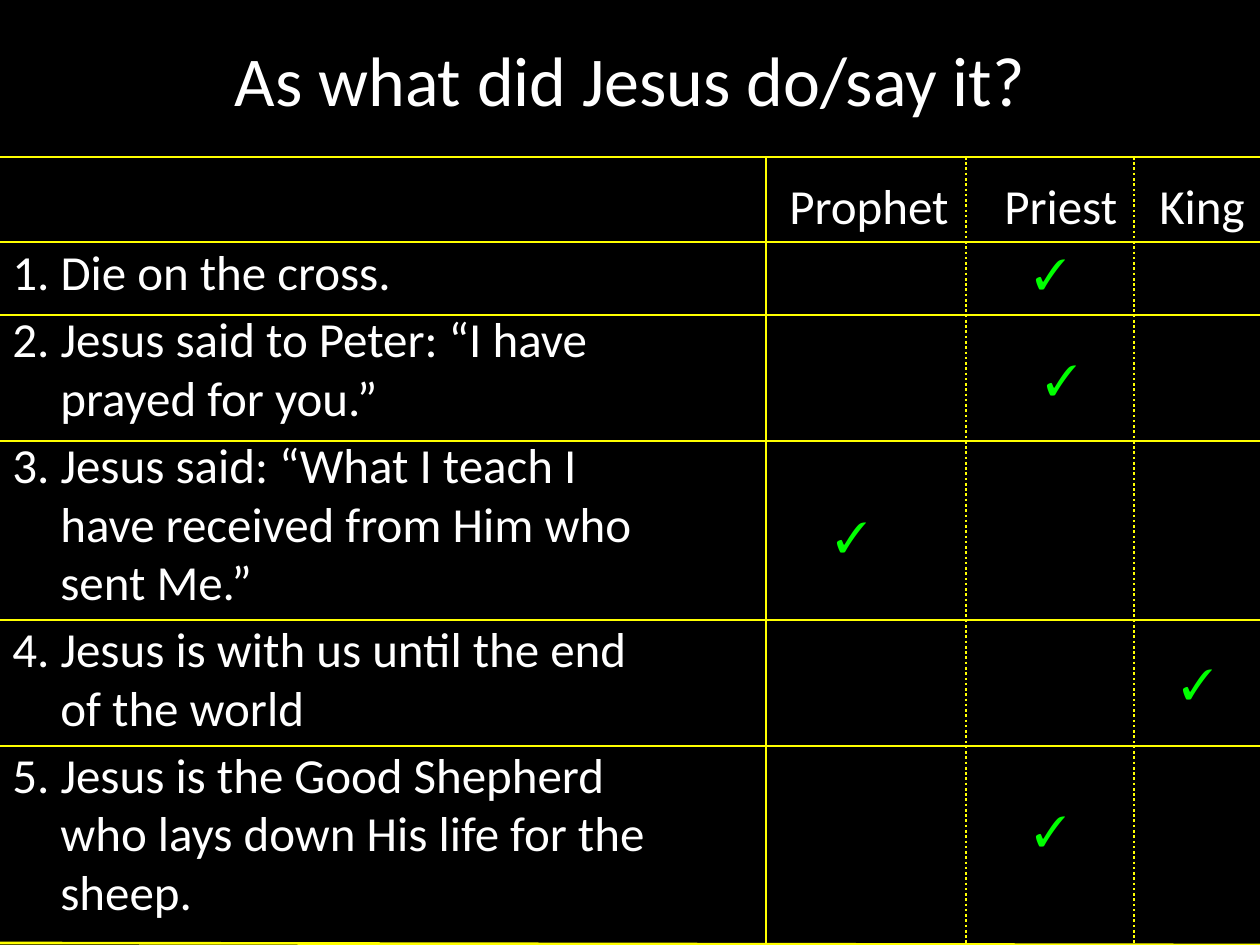
from lxml.etree import SubElement
from pptx import Presentation
from pptx.dml.color import RGBColor
from pptx.enum.dml import MSO_LINE
from pptx.enum.shapes import MSO_CONNECTOR
from pptx.enum.text import MSO_ANCHOR, PP_ALIGN
from pptx.oxml.ns import qn
from pptx.util import Pt

COLORS = {"background": "000000", "text": "FFFFFF", "rule": "FFFF00", "check": "00FF00"}
PX = 914400 // 126
WIDTH, HEIGHT = 1260, 945

TITLE = "As what did Jesus do/say it?"
ROLES = [("Prophet", 790), ("Priest", 1005), ("King", 1160)]
STATEMENTS = [
    "1. Die on the cross.",
    "2. Jesus said to Peter: “I have\nprayed for you.”",
    "3. Jesus said: “What I teach I\nhave received from Him who\nsent Me.”",
    "4. Jesus is with us until the end\nof the world",
    "5. Jesus is the Good Shepherd\nwho lays down His life for the\nsheep.",
]
CHECKS = [(1050, 272), (1061, 378), (851, 535), (1197, 682), (1050, 829)]
TABLE_TOP = 157
ROW_RULES = [TABLE_TOP, 242, 315, 441, 620, 746]
COLUMN_RULES = [(766, None), (966, MSO_LINE.ROUND_DOT), (1134, MSO_LINE.ROUND_DOT)]
INSET = 13
INDENT = 48
CHECK_WIDTH, CHECK_HEIGHT = 59, 63


def color(name):
    return RGBColor.from_string(COLORS[name])


def add_text(slide, box, paragraphs, size, font="Calibri", ink="text",
             align=PP_ALIGN.LEFT, anchor=MSO_ANCHOR.TOP, wrap=True):
    frame = slide.shapes.add_textbox(*(n * PX for n in box)).text_frame
    frame.word_wrap = wrap
    frame.vertical_anchor = anchor
    for index, words in enumerate(paragraphs):
        paragraph = frame.add_paragraph() if index else frame.paragraphs[0]
        paragraph.text = words
        paragraph.alignment = align
        for run in paragraph.runs:
            run.font.size = Pt(size)
            run.font.name = font
            run.font.color.rgb = color(ink)
    return frame


def add_rule(slide, x1, y1, x2, y2, dash=None):
    rule = slide.shapes.add_connector(
        MSO_CONNECTOR.STRAIGHT, *(n * PX for n in (x1, y1, x2, y2)))
    rule.line.color.rgb = color("rule")
    rule.line.width = Pt(1.5)
    if dash:
        rule.line.dash_style = dash
    SubElement(rule._element.spPr, qn("a:effectLst"))


def add_body(slide):
    header = "".join("\t" + role for role, _ in ROLES)
    frame = add_text(slide, (0, 169, WIDTH, HEIGHT - 169), [header] + STATEMENTS, 28)
    heading, *statements = frame.paragraphs
    tabs = SubElement(heading._p.get_or_add_pPr(), qn("a:tabLst"))
    for _, left in ROLES:
        SubElement(tabs, qn("a:tab"), pos=str((left - INSET) * PX), algn="l")
    for statement in statements:
        statement.space_before = Pt(4.5)
        properties = statement._p.get_or_add_pPr()
        properties.set("marL", str(INDENT * PX))
        properties.set("indent", str(-INDENT * PX))


def main():
    deck = Presentation()
    deck.slide_width, deck.slide_height = WIDTH * PX, HEIGHT * PX
    slide = deck.slides.add_slide(deck.slide_layouts[6])
    slide.background.fill.solid()
    slide.background.fill.fore_color.rgb = color("background")

    add_text(slide, (0, 0, WIDTH, TABLE_TOP), [TITLE], 40,
             align=PP_ALIGN.CENTER, anchor=MSO_ANCHOR.MIDDLE)
    add_body(slide)

    add_rule(slide, 0, HEIGHT - 2, WIDTH, HEIGHT)
    for y in ROW_RULES:
        add_rule(slide, 0, y, WIDTH, y)
    for x, dash in COLUMN_RULES:
        add_rule(slide, x, TABLE_TOP, x, HEIGHT, dash)

    for x, y in CHECKS:
        box = (x - CHECK_WIDTH // 2, y - CHECK_HEIGHT // 2, CHECK_WIDTH, CHECK_HEIGHT)
        add_text(slide, box, ["✓"], 24, "Times New Roman", "check",
                 PP_ALIGN.CENTER, MSO_ANCHOR.MIDDLE, wrap=False)

    deck.save("out.pptx")


if __name__ == "__main__":
    main()
